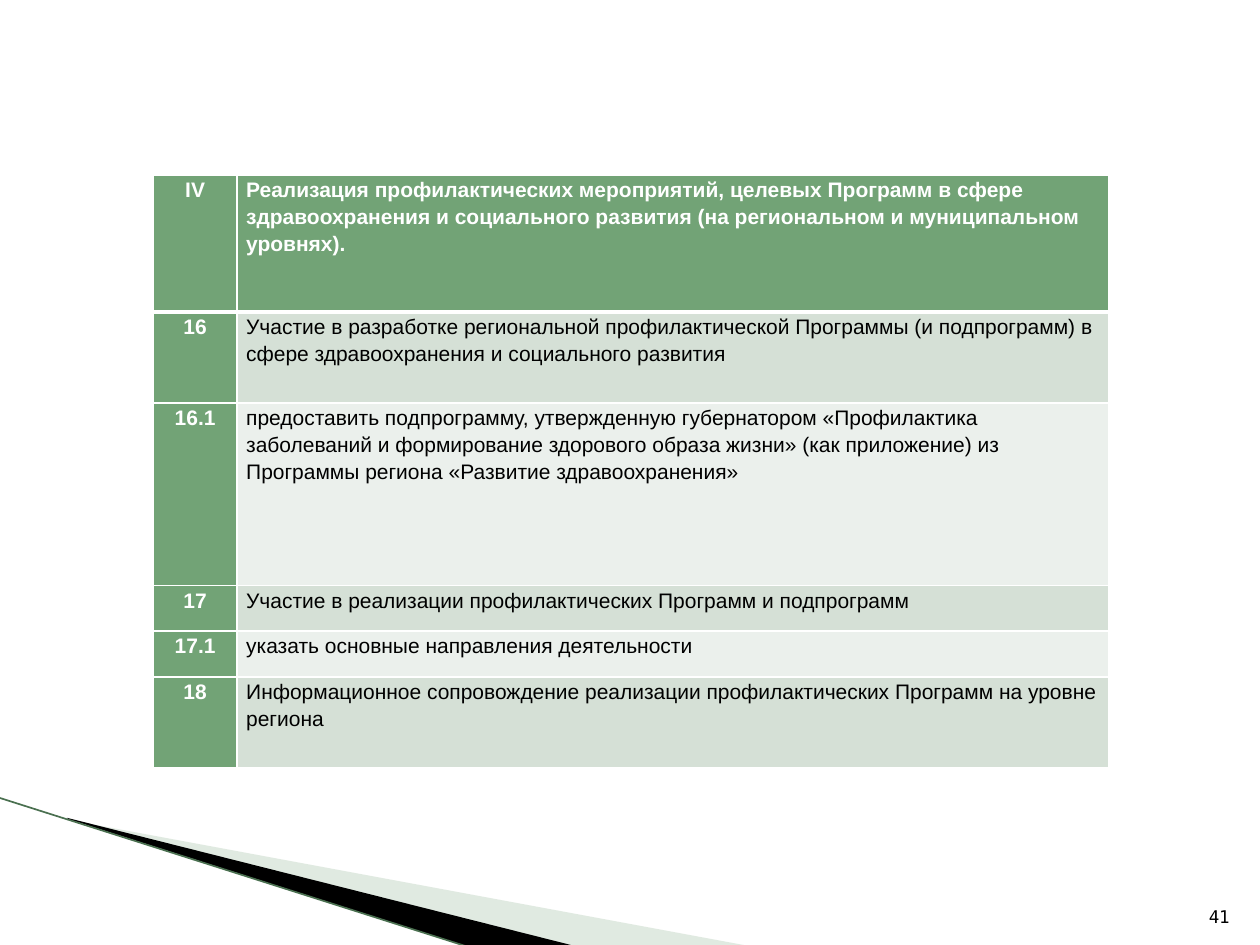
"""Build a slide with a numbered table of prevention programme activities."""
from dataclasses import dataclass

from lxml import etree
from pptx import Presentation
from pptx.dml.color import RGBColor
from pptx.enum.shapes import MSO_CONNECTOR
from pptx.enum.text import MSO_ANCHOR, PP_ALIGN
from pptx.oxml.ns import qn
from pptx.util import Pt

STRAIGHT = MSO_CONNECTOR.STRAIGHT
BOTTOM = MSO_ANCHOR.BOTTOM
LEFT, CENTER, RIGHT = PP_ALIGN.LEFT, PP_ALIGN.CENTER, PP_ALIGN.RIGHT


@dataclass(frozen=True)
class Theme:
    green: str = "72A376"
    band_dark: str = "D5E0D6"
    band_light: str = "EBF0EC"
    wedge: str = "B3CBB5"
    edge: str = "4A7050"
    white: str = "FFFFFF"
    black: str = "000000"
    font: str = "Arial"
    number_font: str = "DejaVu Sans Mono"
    table_size: int = 12
    number_size: int = 10


theme = Theme()


def style(paragraph, font, size, color, align, bold=False):
    paragraph.alignment = align
    paragraph.font.name = font
    paragraph.font.size = Pt(size)
    paragraph.font.bold = bold
    paragraph.font.color.rgb = RGBColor.from_string(color)


def add_border(cell, side, width):
    border = etree.SubElement(cell._tc.get_or_add_tcPr(), qn(f"a:ln{side}"), w=str(Pt(width)))
    fill = etree.SubElement(border, qn("a:solidFill"))
    etree.SubElement(fill, qn("a:srgbClr"), val=theme.white)


prs = Presentation()
prs.slide_width, prs.slide_height = Pt(720), Pt(540)
slide = prs.slides.add_slide(prs.slide_layouts[6])
shapes = slide.shapes

wedges = [
    (theme.wedge, 40, (56.2, 393.8, 299.5, 113.8),
     [(39.6, 468.6), (428.7, 540.7), (328.3, 540.7), (39.6, 468)]),
    (theme.black, 100, (-4.3, 455.8, 299.5, 66.2),
     [(38.2, 467.3), (329, 540.7), (269, 541.4), (38.9, 468)]),
]
for color, opacity, frame, corners in wedges:
    points = [(Pt(x), Pt(y)) for x, y in corners]
    builder = shapes.build_freeform(*points[0])
    builder.add_line_segments(points[1:], close=True)
    wedge = builder.convert_to_shape()
    left, top, width, height = (Pt(value) for value in frame)
    shift_x, shift_y = wedge.left - left, wedge.top - top
    wedge.left, wedge.top, wedge.width, wedge.height = left, top, width, height
    outline = next(wedge._element.iter(qn("a:path")))
    outline.set("w", str(width))
    outline.set("h", str(height))
    for corner in outline.iter(qn("a:pt")):
        corner.set("x", str(int(corner.get("x")) + shift_x))
        corner.set("y", str(int(corner.get("y")) + shift_y))
    wedge.shadow.inherit = False
    wedge.line.fill.background()
    wedge.fill.solid()
    wedge.fill.fore_color.rgb = RGBColor.from_string(color)
    if opacity < 100:
        tint = wedge._element.spPr.find(f"{qn('a:solidFill')}/{qn('a:srgbClr')}")
        etree.SubElement(tint, qn("a:alpha"), val=str(opacity * 1000))

edge = shapes.add_connector(STRAIGHT, Pt(-0.7), Pt(455.8), Pt(268.5), Pt(541.4))
edge.line.color.rgb = RGBColor.from_string(theme.edge)
edge.line.width = Pt(0.95)
etree.SubElement(edge._element.spPr, qn("a:effectLst"))

activities = [
    ("IV", "Реализация профилактических мероприятий, целевых Программ в сфере здравоохранения "
           "и социального развития (на региональном и муниципальном уровнях).", 78.3),
    ("16", "Участие в разработке региональной профилактической Программы (и подпрограмм) "
           "в сфере здравоохранения и социального развития", 52),
    ("16.1", "предоставить подпрограмму, утвержденную губернатором «Профилактика заболеваний "
             "и формирование здорового образа жизни» (как приложение) из Программы региона "
             "«Развитие здравоохранения»", 104.4),
    ("17", "Участие в реализации профилактических Программ и подпрограмм", 26.1),
    ("17.1", "указать основные направления деятельности", 26.1),
    ("18", "Информационное сопровождение реализации профилактических Программ "
           "на уровне региона", 52),
]
column_widths = [47.6, 498]
table_height = sum(height for _, _, height in activities)
table = shapes.add_table(len(activities), 2, Pt(87.7), Pt(99.9),
                         Pt(sum(column_widths)), Pt(table_height)).table
for column, width in zip(table.columns, column_widths):
    column.width = Pt(width)

for row, (number, activity, height) in enumerate(activities):
    table.rows[row].height = Pt(height)
    for col, wording in enumerate((number, activity)):
        cell = table.cell(row, col)
        accented = row == 0 or col == 0
        band = theme.band_dark if row % 2 else theme.band_light
        cell.margin_left = cell.margin_right = Pt(5.4)
        cell.margin_top = cell.margin_bottom = 0
        for side in "LRTB":
            heavy = (row, side) in ((0, "B"), (1, "T"))
            add_border(cell, side, 3 if heavy else 1)
        cell.fill.solid()
        cell.fill.fore_color.rgb = RGBColor.from_string(theme.green if accented else band)
        cell.text = wording
        paragraph = cell.text_frame.paragraphs[0]
        paragraph.line_spacing = 1.15
        style(paragraph, theme.font, theme.table_size,
              theme.white if accented else theme.black,
              LEFT if col else CENTER, bold=accented)

page_number = shapes.add_textbox(Pt(681), Pt(504.7), Pt(28.8), Pt(28.8)).text_frame
page_number.word_wrap = True
page_number.vertical_anchor = BOTTOM
page_number.text = "41"
style(page_number.paragraphs[0], theme.number_font, theme.number_size, theme.black, RIGHT)

prs.save("out.pptx")
